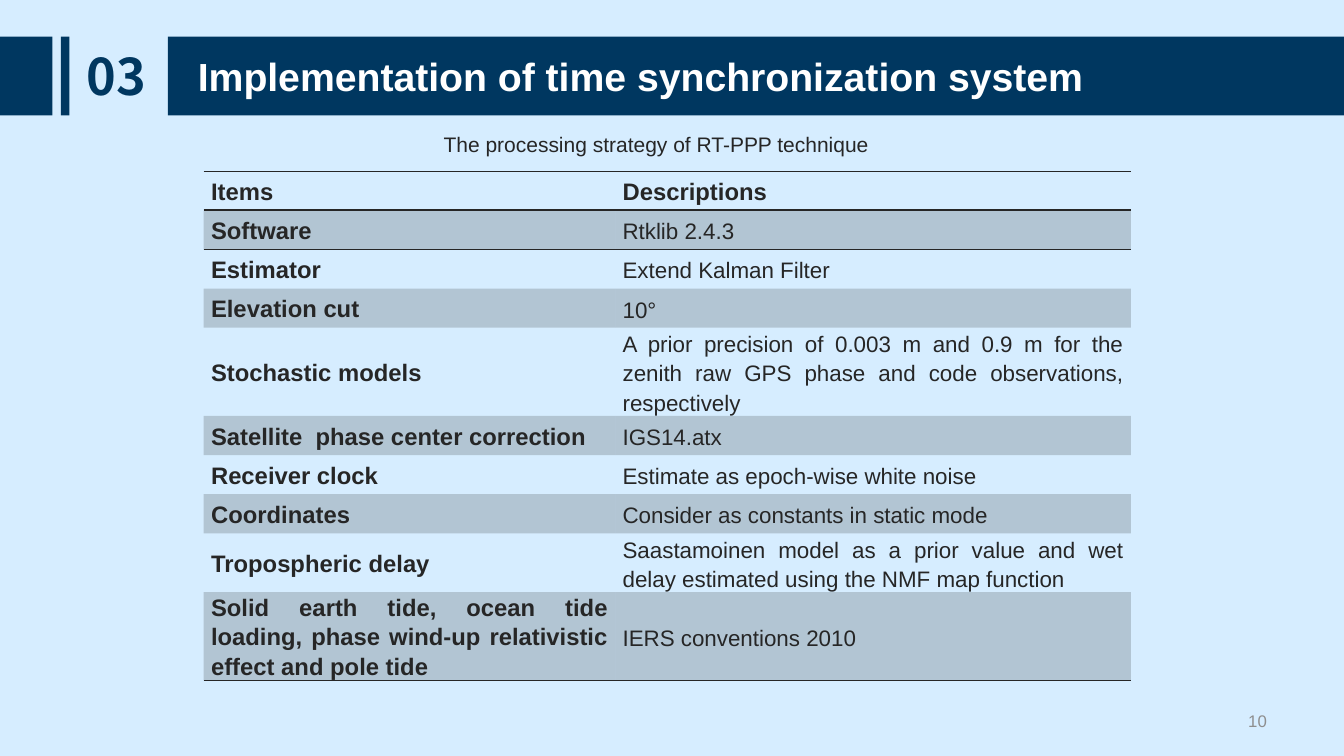
from dataclasses import dataclass

from lxml.etree import SubElement
from pptx import Presentation
from pptx.dml.color import RGBColor
from pptx.enum.shapes import MSO_SHAPE
from pptx.enum.text import MSO_ANCHOR, PP_ALIGN
from pptx.oxml.ns import qn
from pptx.util import Pt

PX = 9525


@dataclass(frozen=True)
class Theme:
    background: str = "D6EDFF"
    navy: str = "003760"
    ink: str = "262626"
    white: str = "FFFFFF"
    grey: str = "8E8E8E"
    font: str = "Arial"
    number_font: str = "Noto Sans CJK SC"
    number: int = 36
    title: int = 28
    item: int = 17
    description: int = 16
    caption: int = 15
    page: int = 12
    leading: int = 21
    band_alpha: int = 20000
    thin: float = 1
    thick: float = 1.5
    plain_table: str = "{2D5ABB26-0587-4C30-8999-92F81FD0307C}"


T = Theme()

ROWS = [
    ("Items", "Descriptions"),
    ("Software", "Rtklib 2.4.3"),
    ("Estimator", "Extend Kalman Filter"),
    ("Elevation cut", "10°"),
    ("Stochastic models",
     "A prior precision of 0.003 m and 0.9 m for the zenith raw GPS phase "
     "and code observations, respectively"),
    ("Satellite  phase center correction", "IGS14.atx"),
    ("Receiver clock", "Estimate as epoch-wise white noise"),
    ("Coordinates", "Consider as constants in static mode"),
    ("Tropospheric delay",
     "Saastamoinen model as a prior value and wet delay estimated using "
     "the NMF map function"),
    ("Solid earth tide, ocean tide loading, phase wind-up relativistic "
     "effect and pole tide", "IERS conventions 2010"),
]


def emu(*lengths):
    return [round(length * PX) for length in lengths]


def apply(target, values):
    for name, value in values.items():
        setattr(target, name, value)


def write(p, text, size, color, bold=False, font=T.font):
    r = p.add_run()
    r.text = text
    apply(r.font, {"size": Pt(size), "bold": bold, "name": font})
    r.font.color.rgb = RGBColor.from_string(color)
    if font == T.number_font:
        SubElement(r.font._element, qn("a:ea"), typeface=font)


def add_text(shapes, box, text, size, color, bold=False, font=T.font,
             align=PP_ALIGN.LEFT, anchor=MSO_ANCHOR.TOP):
    tf = shapes.add_textbox(*emu(*box)).text_frame
    apply(tf, {"word_wrap": True, "vertical_anchor": anchor})
    p = tf.paragraphs[0]
    p.alignment = align
    write(p, text, size, color, bold, font)


def add_header(s, box, number, title):
    x, y, w, h = box
    group = s.shapes.add_group_shape()
    for left, width in ((0, 50), (58, 8), (160, w - 160)):
        bar = group.shapes.add_shape(
            MSO_SHAPE.RECTANGLE, *emu(x + left, y, width, h))
        bar.shadow.inherit = False
        bar.fill.solid()
        bar.fill.fore_color.rgb = RGBColor.from_string(T.navy)
        bar.line.fill.background()
    add_text(group.shapes, (x + 73, y + 3, 84, 68), number, T.number,
             T.navy, True, T.number_font)
    add_text(s.shapes, (x + 179, y + 10, 878, 55), title, T.title,
             T.white, True)


def add_border(cell, side, width):
    ln = SubElement(cell._tc.get_or_add_tcPr(), qn(f"a:ln{side}"),
                    w=str(Pt(width)))
    fill = SubElement(ln, qn("a:solidFill"))
    SubElement(fill, qn("a:srgbClr"), val=T.ink)


def shade(cell, banded):
    if not banded:
        cell.fill.background()
        return
    cell.fill.solid()
    cell.fill.fore_color.rgb = RGBColor.from_string(T.ink)
    color = cell._tc.tcPr.find(qn("a:solidFill")).find(qn("a:srgbClr"))
    SubElement(color, qn("a:alpha"), val=str(T.band_alpha))


def add_strategy_table(s, box, rows, item_width, base_height):
    x, y, w, h = box
    frame = s.shapes.add_table(len(rows), 2, *emu(x, y, w, base_height))
    frame.height = emu(h)[0]
    table = frame.table
    apply(table, {"first_row": False, "horz_banding": False})
    table._tbl.tblPr.find(qn("a:tableStyleId")).text = T.plain_table
    for column, width in zip(table.columns, emu(item_width, w - item_width)):
        column.width = width
    borders = {0: {"T": T.thin, "B": T.thick},
               1: {"T": T.thick},
               len(rows) - 1: {"B": T.thin}}
    margin = emu(7)[0]
    for i, texts in enumerate(rows):
        for j, text in enumerate(texts):
            cell = table.cell(i, j)
            apply(cell, {"margin_left": margin, "margin_right": margin,
                         "margin_top": 0, "margin_bottom": 0,
                         "vertical_anchor": MSO_ANCHOR.MIDDLE})
            for side, width in borders.get(i, {}).items():
                add_border(cell, side, width)
            shade(cell, i % 2 == 1)
            p = cell.text_frame.paragraphs[0]
            apply(p, {"alignment": PP_ALIGN.JUSTIFY,
                      "line_spacing": Pt(T.leading)})
            bold = i == 0 or j == 0
            write(p, text, T.item if bold else T.description, T.ink, bold)


def build_slide(prs):
    s = prs.slides.add_slide(prs.slide_layouts[6])
    s.background.fill.solid()
    s.background.fill.fore_color.rgb = RGBColor.from_string(T.background)
    add_text(s.shapes, (917, 667, 299, 38), "10", T.page, T.grey,
             align=PP_ALIGN.RIGHT, anchor=MSO_ANCHOR.MIDDLE)
    add_header(s, (0, 35, 1280, 75), "03",
               "Implementation of time synchronization system")
    add_text(s.shapes, (413, 121, 438, 34),
             "The processing strategy of RT-PPP technique", T.caption, T.ink)
    add_strategy_table(s, (194, 163, 883, 485), ROWS, 392, 373)


def main():
    prs = Presentation()
    prs.slide_width, prs.slide_height = emu(1280, 720)
    build_slide(prs)
    prs.save("out.pptx")


if __name__ == "__main__":
    main()
